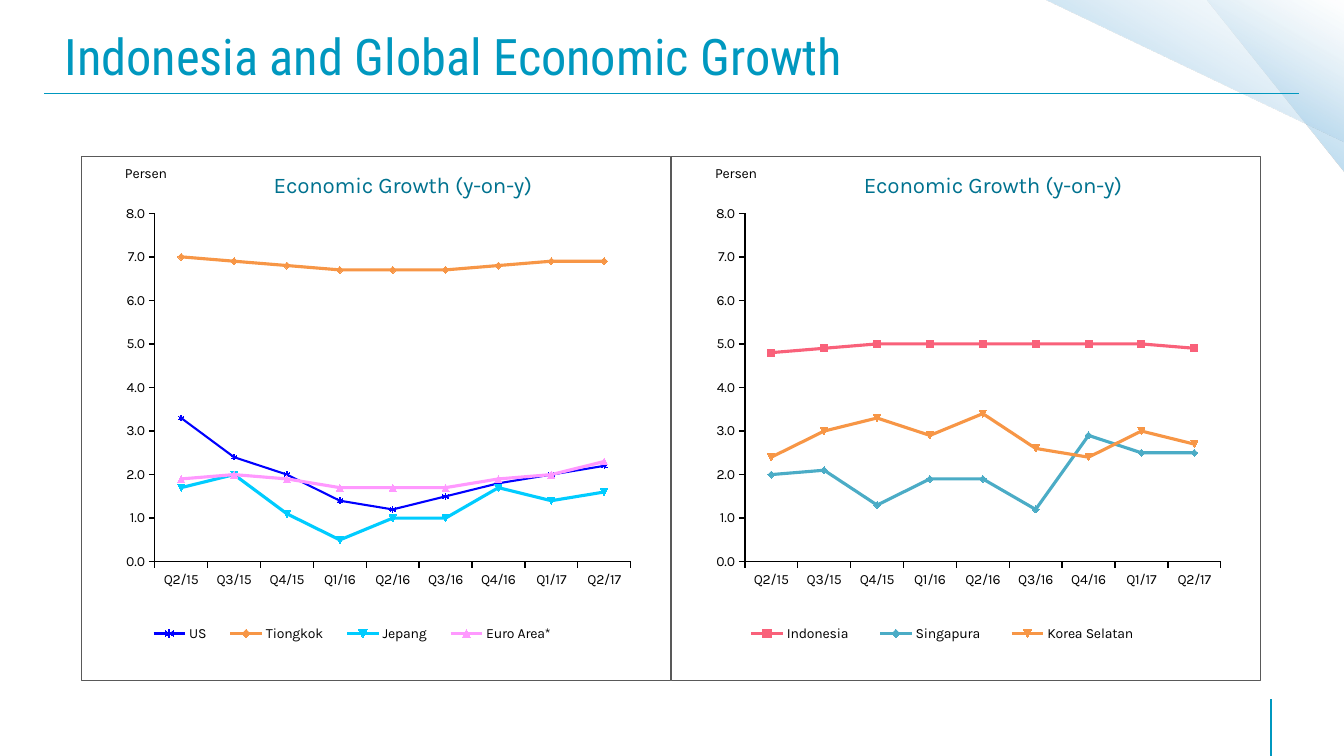
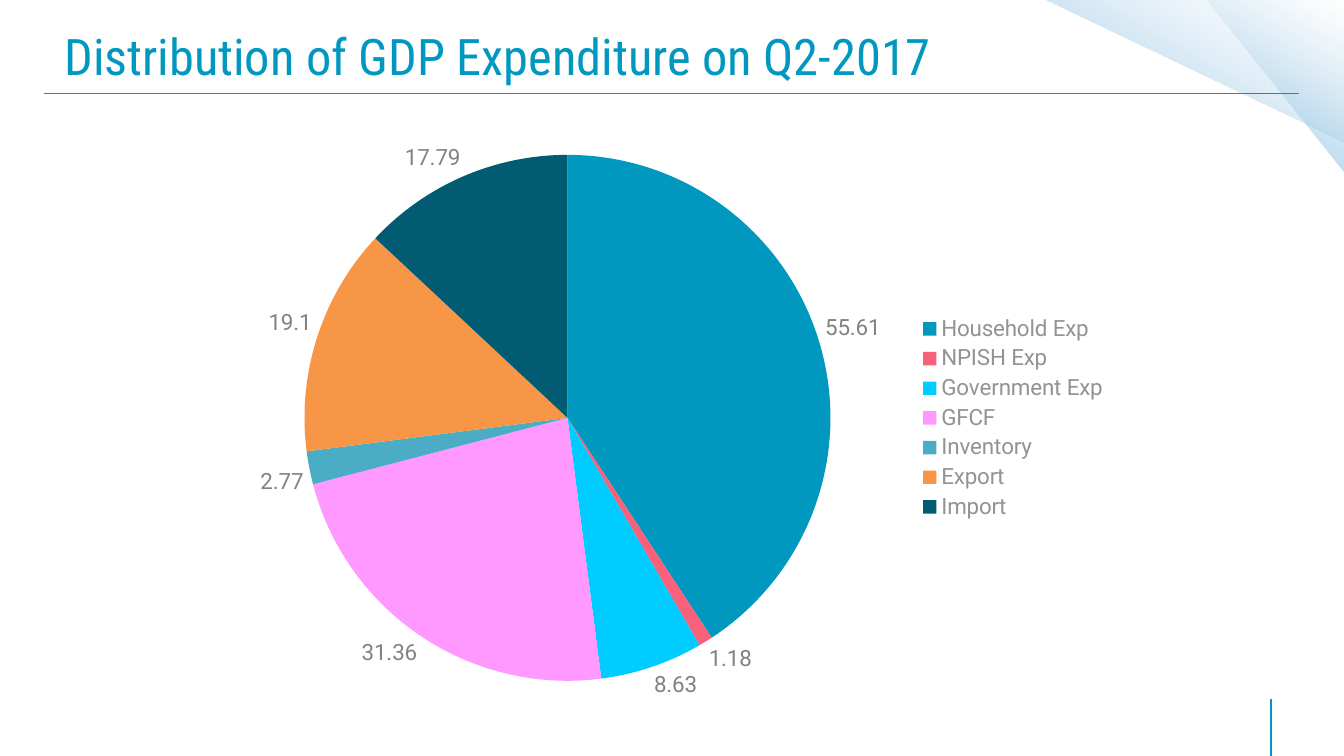
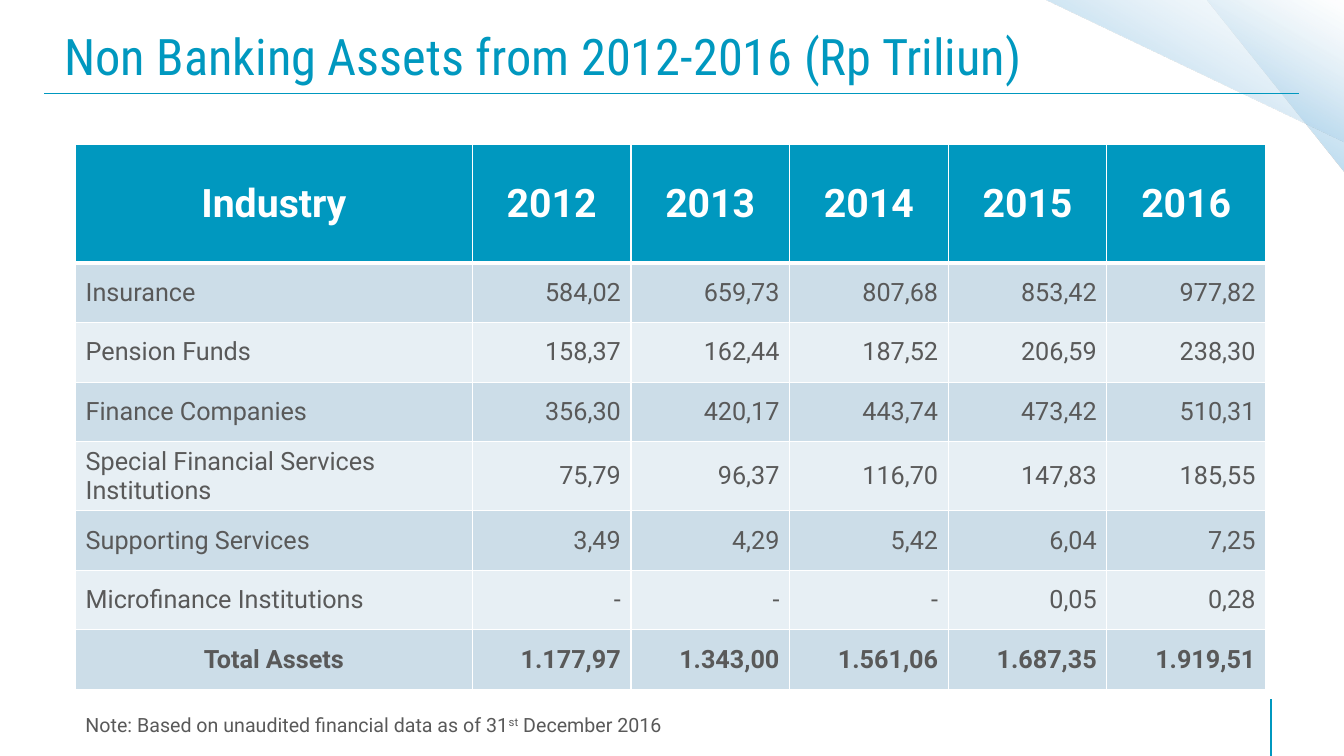
import dataclasses

import lxml.etree
import pptx
import pptx.chart.data
import pptx.dml.color
import pptx.enum.chart
import pptx.enum.shapes
import pptx.enum.text
import pptx.oxml.ns
import pptx.util

Pt = pptx.util.Pt
qn = pptx.oxml.ns.qn
ALIGN = pptx.enum.text.PP_ALIGN
MIDDLE = pptx.enum.text.MSO_ANCHOR.MIDDLE


@dataclasses.dataclass(frozen=True)
class Theme:
    accent: str = "0098BF"
    chart_title: str = "00728F"
    text: str = "595959"
    label: str = "828282"
    legend: str = "939393"
    white: str = "FFFFFF"
    black: str = "000000"
    red: str = "F9617A"
    sky: str = "00CCFF"
    pink: str = "FF99FF"
    teal: str = "4BACC6"
    orange: str = "F79646"
    navy: str = "005B73"
    blue: str = "0000FF"
    bands: tuple = ("CCDDE8", "E7EFF4")
    gradient: tuple = ((0, "8FC8E8", 100), (50, "A4CEE9", 44), (100, "DEEDF6", 0))
    heading_font: str = "Roboto Condensed"
    body_font: str = "Roboto"
    chart_font: str = "Karla"
    title_size: int = 36
    header_size: int = 28
    body_size: int = 18
    chart_size: int = 16
    note_size: int = 14
    axis_size: int = 10


THEME = Theme()


@dataclasses.dataclass(frozen=True)
class Box:
    left: float
    top: float
    width: float
    height: float

    def lengths(self):
        return [Pt(value) for value in dataclasses.astuple(self)]

    def halves(self):
        half = self.width / 2
        return [Box(self.left + index * half, self.top, half, self.height) for index in range(2)]


def rgb(color):
    return pptx.dml.color.RGBColor.from_string(color)


def add_xml(parent, tag, **attributes):
    return lxml.etree.SubElement(parent, qn(tag), {key: str(value) for key, value in attributes.items()})


def add_solid_fill(parent, color):
    add_xml(add_xml(parent, "a:solidFill"), "a:srgbClr", val=color)


def format_font(font, size, color, name, bold=False):
    font.size = Pt(size)
    font.name = name
    font.bold = bold
    font.color.rgb = rgb(color)


def write_text(paragraph, text, size=THEME.body_size, color=THEME.text, font=THEME.body_font,
               bold=False, align=ALIGN.LEFT, baseline=0):
    paragraph.alignment = align
    run = paragraph.add_run()
    run.text = text
    format_font(run.font, size, color, font, bold)
    if baseline:
        run._r.get_or_add_rPr().set("baseline", str(baseline * 1000))


def add_corner_triangle(slide, box):
    kind = pptx.enum.shapes.MSO_SHAPE.RIGHT_TRIANGLE
    shape = slide.shapes.add_shape(kind, *box.lengths())
    shape.shadow.inherit = False
    shape.rotation = 180
    shape.line.fill.background()
    shape.fill.gradient()
    shape.fill.gradient_angle = 240
    stops = shape.element.find(".//" + qn("a:gsLst"))
    for stop in list(stops):
        stops.remove(stop)
    for position, color, opacity in THEME.gradient:
        stop = add_xml(stops, "a:gs", pos=position * 1000)
        tint = add_xml(stop, "a:srgbClr", val=color)
        add_xml(tint, "a:alpha", val=opacity * 1000)
    return shape


def add_rule(slide, *ends):
    kind = pptx.enum.shapes.MSO_CONNECTOR.STRAIGHT
    connector = slide.shapes.add_connector(kind, *[Pt(end) for end in ends])
    connector.line.color.rgb = rgb(THEME.accent)
    connector.line.width = Pt(1)
    add_xml(connector.element.spPr, "a:effectLst")
    return connector


def decorate_layout(layout, slide):
    for placeholder in list(layout.placeholders)[1:]:
        layout.shapes.element.remove(placeholder.element)
    decorations = [
        add_corner_triangle(slide, Box(862, 0, 98, 123)),
        add_corner_triangle(slide, Box(746, 0, 215, 102)),
        add_rule(slide, 31.7, 67, 928, 67),
        add_rule(slide, 908, 540, 908, 499),
    ]
    for index, decoration in enumerate(decorations):
        layout.shapes.element.insert(2 + index, decoration.element)


def write_title(slide, box, text):
    title = slide.shapes.title
    title.left, title.top, title.width, title.height = box.lengths()
    frame = title.text_frame
    frame.auto_size = pptx.enum.text.MSO_AUTO_SIZE.NONE
    frame.vertical_anchor = MIDDLE
    frame.margin_left = frame.margin_right = Pt(13)
    frame.margin_top = frame.margin_bottom = Pt(6.5)
    write_text(frame.paragraphs[0], text, size=THEME.title_size, color=THEME.accent, font=THEME.heading_font)


def chart_part(chart, tag):
    return chart.element.find(".//" + qn(tag))


def place_part(part, left, top, width=None, height=None, inner=False):
    for layout in part.findall(qn("c:layout")):
        part.remove(layout)
    before = [child for child in part if child.tag in (qn("c:tx"), qn("c:legendPos"))]
    layout = lxml.etree.Element(qn("c:layout"))
    part.insert(part.index(before[0]) + 1 if before else 0, layout)
    manual = add_xml(layout, "c:manualLayout")
    if inner:
        add_xml(manual, "c:layoutTarget", val="inner")
    add_xml(manual, "c:xMode", val="edge")
    add_xml(manual, "c:yMode", val="edge")
    for name, value in zip("xywh", (left, top, width, height)):
        if value is not None:
            add_xml(manual, "c:" + name, val=value)


def frame_chart(chart):
    properties = lxml.etree.Element(qn("c:spPr"))
    add_solid_fill(properties, THEME.white)
    add_solid_fill(add_xml(properties, "a:ln", w=Pt(0.75)), THEME.text)
    chart_part(chart, "c:chart").addnext(properties)


def add_chart(slide, box, kind, categories, series):
    data = pptx.chart.data.CategoryChartData()
    data.categories = categories
    for name, values in series:
        data.add_series(name, values)
    return slide.shapes.add_chart(kind, *box.lengths(), data).chart


def add_legend(chart, position, size, color, font):
    chart.has_legend = True
    chart.legend.position = position
    chart.legend.include_in_layout = False
    format_font(chart.legend.font, size, color, font)


def format_axis(axis):
    axis.has_major_gridlines = False
    axis.major_tick_mark = pptx.enum.chart.XL_TICK_MARK.OUTSIDE
    axis.minor_tick_mark = pptx.enum.chart.XL_TICK_MARK.NONE
    axis.format.line.color.rgb = rgb(THEME.black)
    axis.format.line.width = Pt(1)


def add_growth_chart(slide, box, quarters, countries):
    series = [(name, values) for name, color, values in countries]
    chart = add_chart(slide, box, pptx.enum.chart.XL_CHART_TYPE.LINE_MARKERS, quarters, series)
    format_font(chart.font, THEME.axis_size, THEME.black, THEME.chart_font)
    frame_chart(chart)
    place_part(chart_part(chart, "c:plotArea"), 0.125, 0.108, 0.808, 0.665, inner=True)
    chart.plots[0].vary_by_categories = False

    chart.has_title = True
    write_text(chart.chart_title.text_frame.paragraphs[0], "Economic Growth (y-on-y)",
               size=THEME.chart_size, color=THEME.chart_title, font=THEME.chart_font, align=ALIGN.CENTER)
    title = chart_part(chart, "c:title")
    place_part(title, 0.32, 0.02)
    title.find(qn("c:overlay")).set("val", "1")

    format_axis(chart.category_axis)
    axis = chart.value_axis
    format_axis(axis)
    axis.minimum_scale, axis.maximum_scale, axis.major_unit = 0, 8, 1
    axis.tick_labels.number_format = "#,##0.0"
    axis.tick_labels.number_format_is_linked = False
    write_text(axis.axis_title.text_frame.paragraphs[0], "Persen",
               size=THEME.axis_size, color=THEME.black, font=THEME.chart_font)
    axis_title = chart_part(chart, "c:valAx").find(qn("c:title"))
    body = axis_title.find(".//" + qn("a:bodyPr"))
    body.set("rot", "0")
    body.set("vert", "horz")
    place_part(axis_title, 0.07, 0.01)

    add_legend(chart, pptx.enum.chart.XL_LEGEND_POSITION.BOTTOM,
               THEME.axis_size, THEME.black, THEME.chart_font)
    place_part(chart_part(chart, "c:legend"), 0.09, 0.88, 0.74, 0.06)

    for line, (name, color, values) in zip(chart.plots[0].series, countries):
        line.smooth = False
        line.format.line.color.rgb = rgb(color)
        line.format.line.width = Pt(2.25)
        if name == "US":
            line.format.line.width = Pt(1.5)
            line.marker.style = pptx.enum.chart.XL_MARKER_STYLE.STAR
            line.marker.size = 4


def add_growth_charts(slide, box):
    quarters = ["Q2/15", "Q3/15", "Q4/15", "Q1/16", "Q2/16", "Q3/16", "Q4/16", "Q1/17", "Q2/17"]
    groups = [
        [
            ("US", THEME.blue, [3.3, 2.4, 2, 1.4, 1.2, 1.5, 1.8, 2, 2.2]),
            ("Tiongkok", THEME.orange, [7, 6.9, 6.8, 6.7, 6.7, 6.7, 6.8, 6.9, 6.9]),
            ("Jepang", THEME.sky, [1.7, 2, 1.1, 0.5, 1, 1, 1.7, 1.4, 1.6]),
            ("Euro Area*", THEME.pink, [1.9, 2, 1.9, 1.7, 1.7, 1.7, 1.9, 2, 2.3]),
        ],
        [
            ("Indonesia", THEME.red, [4.8, 4.9, 5, 5, 5, 5, 5, 5, 4.9]),
            ("Singapura", THEME.teal, [2, 2.1, 1.3, 1.9, 1.9, 1.2, 2.9, 2.5, 2.5]),
            ("Korea Selatan", THEME.orange, [2.4, 3, 3.3, 2.9, 3.4, 2.6, 2.4, 3, 2.7]),
        ],
    ]
    for half, countries in zip(box.halves(), groups):
        add_growth_chart(slide, half, quarters, countries)


def add_expenditure_pie(slide, box):
    slices = [
        ("Household Exp", 55.61, THEME.accent),
        ("NPISH Exp", 1.18, THEME.red),
        ("Government Exp", 8.63, THEME.sky),
        ("GFCF", 31.36, THEME.pink),
        ("Inventory", 2.77, THEME.teal),
        ("Export", 19.1, THEME.orange),
        ("Import", 17.79, THEME.navy),
    ]
    names, values, colors = zip(*slices)
    chart = add_chart(slide, box, pptx.enum.chart.XL_CHART_TYPE.PIE, names, [("Series 1", values)])
    chart.has_title = False
    format_font(chart.font, THEME.chart_size, THEME.text, THEME.body_font)
    place_part(chart_part(chart, "c:plotArea"), 0.09, 0.06, 0.59, 0.88, inner=True)
    add_legend(chart, pptx.enum.chart.XL_LEGEND_POSITION.RIGHT,
               THEME.chart_size, THEME.legend, THEME.body_font)
    plot = chart.plots[0]
    plot.vary_by_categories = True
    for index, color in enumerate(colors):
        fill = plot.series[0].points[index].format.fill
        fill.solid()
        fill.fore_color.rgb = rgb(color)
    labels = plot.series[0].data_labels
    labels.show_value = True
    labels.position = pptx.enum.chart.XL_LABEL_POSITION.OUTSIDE_END
    format_font(labels.font, THEME.chart_size, THEME.label, THEME.body_font)


def fill_cell(cell, text, fill, bottom=1, **text_format):
    properties = cell._tc.get_or_add_tcPr()
    for side, width in (("L", 1), ("R", 1), ("T", 1), ("B", bottom)):
        add_solid_fill(add_xml(properties, "a:ln" + side, w=Pt(width)), THEME.white)
    cell.fill.solid()
    cell.fill.fore_color.rgb = rgb(fill)
    cell.vertical_anchor = MIDDLE
    write_text(cell.text_frame.paragraphs[0], text, **text_format)


def add_assets_table(slide, box):
    rows = [
        ("Industry", "2012", "2013", "2014", "2015", "2016"),
        ("Insurance", "584,02", "659,73", "807,68", "853,42", "977,82"),
        ("Pension Funds", "158,37", "162,44", "187,52", "206,59", "238,30"),
        ("Finance Companies", "356,30", "420,17", "443,74", "473,42", "510,31"),
        ("Special Financial Services Institutions", "75,79", "96,37", "116,70", "147,83", "185,55"),
        ("Supporting Services", "3,49", "4,29", "5,42", "6,04", "7,25"),
        ("Microfinance Institutions", "-", "-", "-", "0,05", "0,28"),
        ("Total Assets", "1.177,97", "1.343,00", "1.561,06", "1.687,35", "1.919,51"),
    ]
    table = slide.shapes.add_table(len(rows), len(rows[0]), *box.lengths()).table
    table.horz_banding = False
    for index, column in enumerate(table.columns):
        column.width = Pt(box.width * (5 if index == 0 else 2) / 15)
    for index, row in enumerate(table.rows):
        row.height = Pt(box.height * (2 if index == 0 else 1) / (len(rows) + 1))

    for row_index, row in enumerate(rows):
        total = row_index == len(rows) - 1
        for column_index, text in enumerate(row):
            cell = table.cell(row_index, column_index)
            if row_index == 0:
                fill_cell(cell, text, THEME.accent, bottom=3, size=THEME.header_size,
                          color=THEME.white, bold=True, align=ALIGN.CENTER)
                continue
            label_align = ALIGN.CENTER if total else ALIGN.LEFT
            fill_cell(cell, text, THEME.bands[(row_index - 1) % 2], bold=total,
                      align=ALIGN.RIGHT if column_index else label_align)


def add_note(slide, box):
    frame = slide.shapes.add_textbox(*box.lengths()).text_frame
    frame.word_wrap = True
    frame.auto_size = pptx.enum.text.MSO_AUTO_SIZE.SHAPE_TO_FIT_TEXT
    parts = [("Note: Based on unaudited financial data as of 31", 0), ("st", 30), (" December 2016", 0)]
    for text, baseline in parts:
        write_text(frame.paragraphs[0], text, size=THEME.note_size, baseline=baseline)


def main():
    presentation = pptx.Presentation()
    presentation.slide_width = Pt(960)
    presentation.slide_height = Pt(540)
    layout = presentation.slide_layouts[5]
    titles = [
        "Indonesia and Global Economic Growth",
        "Distribution of GDP Expenditure on Q2-2017",
        "Non Banking Assets from 2012-2016 (Rp Triliun)",
    ]
    slides = [presentation.slides.add_slide(layout) for title in titles]
    decorate_layout(layout, slides[0])
    for slide, title in zip(slides, titles):
        write_title(slide, Box(33, 10, 879, 59), title)
    growth, expenditure, assets = slides
    add_growth_charts(growth, Box(57.6, 111.6, 843, 375))
    add_expenditure_pie(expenditure, Box(159, 85, 640, 427))
    add_assets_table(assets, Box(54, 103, 850, 382.5))
    add_note(assets, Box(54, 505.5, 847, 24.5))
    presentation.save("out.pptx")


if __name__ == "__main__":
    main()
